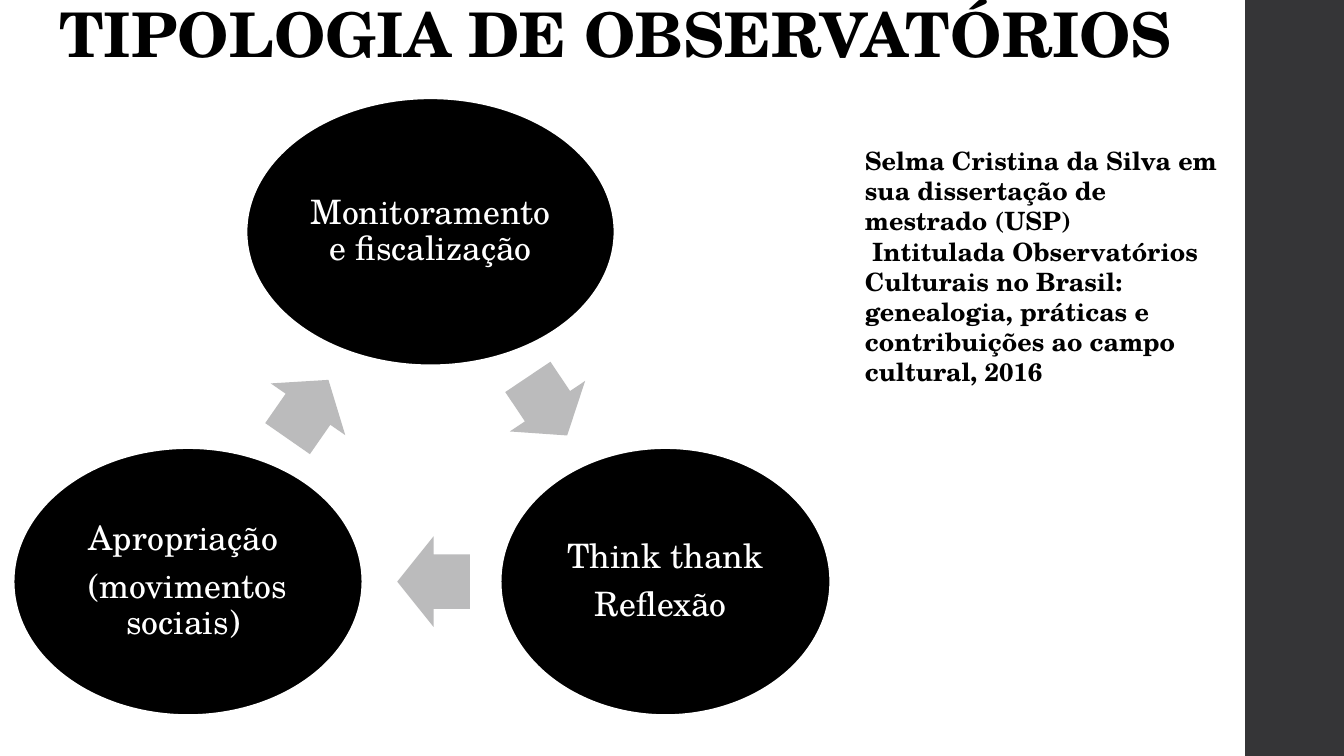
from pptx import Presentation
from pptx.dml.color import RGBColor
from pptx.enum.shapes import MSO_SHAPE
from pptx.enum.text import MSO_ANCHOR, MSO_AUTO_SIZE, PP_ALIGN
from pptx.util import Inches, Pt

OVAL, ARROW, RECT = MSO_SHAPE.OVAL, MSO_SHAPE.RIGHT_ARROW, MSO_SHAPE.RECTANGLE
MIDDLE = MSO_ANCHOR.MIDDLE
NO_AUTOSIZE = MSO_AUTO_SIZE.NONE
LEFT, CENTER = PP_ALIGN.LEFT, PP_ALIGN.CENTER
FONT = "TeX Gyre Schola"
TITLE_ONLY = 5

TYPES = [
    ((2.44, 0.97, 3.66, 2.66), ["Monitoramento e fiscalização"]),
    ((4.96, 4.44, 3.28, 2.66), ["Think thank", "Reflexão "]),
    ((0.13, 4.44, 3.47, 2.66), ["Apropriação ", "(movimentos sociais) "]),
]
ARROWS = [
    ((5.08, 3.58, 0.7, 0.9), 56.1),
    ((3.94, 5.32, 0.72, 0.9), 180),
    ((2.7, 3.61, 0.71, 0.9), 304.8),
]
CITATION = [
    "Selma Cristina da Silva em sua dissertação de mestrado (USP)",
    " Intitulada Observatórios Culturais no Brasil: genealogia, práticas e",
    "contribuições ao campo cultural, 2016",
]


def color(value):
    return RGBColor.from_string(value)


def box(values):
    return [Inches(v) for v in values]


def write(tf, lines, size, ink, align, bold=False, spacing=1.0, after=0):
    tf.word_wrap = True
    for i, line in enumerate(lines):
        p = tf.paragraphs[0] if i == 0 else tf.add_paragraph()
        p.text = line
        p.alignment = align
        p.line_spacing = spacing
        p.space_before = Pt(0)
        p.space_after = Pt(after)
        p.font.name = FONT
        p.font.size = Pt(size)
        p.font.bold = bold
        p.font.color.rgb = color(ink)


def add_shape(s, kind, at, fill, line=None):
    sp = s.shapes.add_shape(kind, *box(at))
    sp.shadow.inherit = False
    sp.fill.solid()
    sp.fill.fore_color.rgb = color(fill)
    if line:
        sp.line.color.rgb = color(line)
        sp.line.width = Pt(2)
    else:
        sp.line.fill.background()
    return sp


def add_type(s, at, lines):
    tf = add_shape(s, OVAL, at, "000000", "FFFFFF").text_frame
    tf.margin_left = tf.margin_right = Inches(0.03)
    tf.margin_top = tf.margin_bottom = Inches(0.03)
    tf.vertical_anchor = MIDDLE
    write(tf, lines, 24, "FFFFFF", CENTER, spacing=0.9, after=8.4)


def add_arrow(s, at, angle):
    sp = add_shape(s, ARROW, at, "BBBBBC")
    sp.adjustments[0] = 0.6
    sp.adjustments[1] = 0.5
    sp.rotation = angle


def set_title(s, at, text):
    sp = s.shapes.title
    sp.left, sp.top, sp.width, sp.height = box(at)
    tf = sp.text_frame
    tf.auto_size = NO_AUTOSIZE
    tf.vertical_anchor = MIDDLE
    write(tf, [text], 44, "000000", CENTER, bold=True, spacing=0.9)


def add_text(s, at, lines):
    sp = s.shapes.add_textbox(*box(at))
    write(sp.text_frame, lines, 18, "000000", LEFT, bold=True)


def main():
    prs = Presentation()
    prs.slide_width, prs.slide_height = box((13.33, 7.5))
    s = prs.slides.add_slide(prs.slide_layouts[TITLE_ONLY])
    add_shape(s, RECT, (12.35, 0, 0.98, 7.5), "353537")
    for at, lines in TYPES:
        add_type(s, at, lines)
    for at, angle in ARROWS:
        add_arrow(s, at, angle)
    set_title(s, (0.28, -0.11, 11.84, 0.97), "TIPOLOGIA DE OBSERVATÓRIOS ")
    add_text(s, (8.48, 1.39, 3.78, 2.52), CITATION)
    prs.save("out.pptx")


if __name__ == "__main__":
    main()
